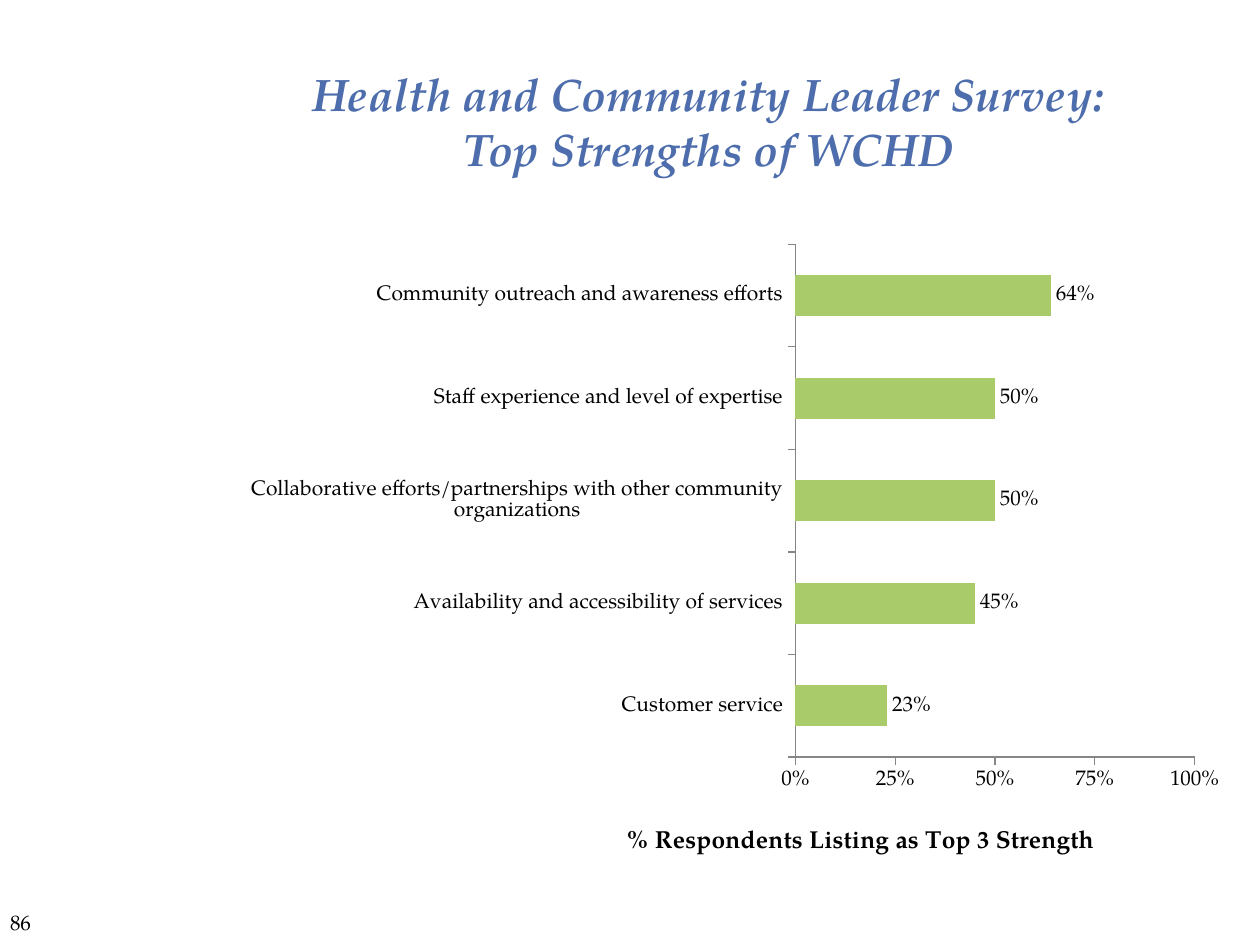
import pptx
import pptx.chart.data
import pptx.dml.color
import pptx.enum.chart
import pptx.enum.text
import pptx.oxml
import pptx.oxml.ns
import pptx.util

PX = 914400 / 126
FONT = "TeX Gyre Pagella"
HEX = {"title": "4D6DAC", "text": "000000", "bar": "AACB69", "axis": "868686"}
RATES = {
    "Customer service": 0.23,
    "Availability and accessibility of services": 0.45,
    "Collaborative efforts/partnerships with other community organizations": 0.5,
    "Staff experience and level of expertise": 0.5,
    "Community outreach and awareness efforts": 0.64,
}


def emu(px):
    return pptx.util.Emu(round(px * PX))


def color(name):
    return pptx.dml.color.RGBColor.from_string(HEX[name])


def style(font, size=12, tint="text", bold=False, italic=False):
    font.name, font.size = FONT, pptx.util.Pt(size)
    font.bold, font.italic = bold, italic
    font.color.rgb = color(tint)


def write(frame, text, **look):
    """Fill a text frame with centred text in one format."""
    frame.text = text
    for para in frame.paragraphs:
        para.alignment = pptx.enum.text.PP_ALIGN.CENTER
        for run in para.runs:
            style(run.font, **look)


def place(node, index, inner=False, **parts):
    """Give a chart part a manual layout, in fractions of the chart."""
    tag = pptx.oxml.ns.qn("c:layout")
    for old in node.findall(tag):
        node.remove(old)
    body = '<c:layoutTarget val="inner"/>' if inner else ""
    body += '<c:xMode val="edge"/><c:yMode val="edge"/>'
    body += "".join(f'<c:{key} val="{val:.3f}"/>' for key, val in parts.items())
    space = pptx.oxml.ns.nsdecls("c")
    node.insert(index, pptx.oxml.parse_xml(
        f"<c:layout {space}><c:manualLayout>{body}</c:manualLayout></c:layout>"))


def add_title(slide, box):
    title = slide.shapes.title
    title.left, title.top, title.width, title.height = map(emu, box)
    frame = title.text_frame
    frame.word_wrap = True
    frame.vertical_anchor = pptx.enum.text.MSO_ANCHOR.MIDDLE
    write(frame, "Health and Community Leader Survey:\vTop Strengths of WCHD",
          size=26, tint="title", bold=True, italic=True)


def add_bars(slide, box):
    data = pptx.chart.data.CategoryChartData(number_format="0%")
    data.categories = list(RATES)
    data.add_series("Series 1", list(RATES.values()))
    kind = pptx.enum.chart.XL_CHART_TYPE.BAR_CLUSTERED
    chart = slide.shapes.add_chart(kind, *map(emu, box), data).chart
    chart.has_legend = chart.has_title = False
    style(chart.font)

    plot = chart.plots[0]
    plot.gap_width, plot.vary_by_categories = 150, False
    fill = plot.series[0].format.fill
    fill.solid()
    fill.fore_color.rgb = color("bar")
    plot.has_data_labels = True
    labels = plot.data_labels
    labels.show_value = True
    labels.number_format, labels.number_format_is_linked = "0%", False
    labels.position = pptx.enum.chart.XL_LABEL_POSITION.OUTSIDE_END
    style(labels.font)

    scale = chart.value_axis
    for axis in (chart.category_axis, scale):
        axis.has_major_gridlines = False
        axis.major_tick_mark = pptx.enum.chart.XL_TICK_MARK.OUTSIDE
        axis.format.line.color.rgb = color("axis")
        axis.format.line.width = pptx.util.Pt(0.75)
        style(axis.tick_labels.font)
    scale.minimum_scale, scale.maximum_scale, scale.major_unit = 0, 1, 0.25
    ticks = scale.tick_labels
    ticks.number_format, ticks.number_format_is_linked = "0%", False
    title = scale.axis_title
    write(title.text_frame, "% Respondents Listing as Top 3 Strength",
          size=14, bold=True)

    wide, high = box[2:]
    area = chart.element.chart.plotArea
    place(area, 0, inner=True, x=564 / wide, y=13 / high,
          w=399 / wide, h=513 / high)
    place(title.element, 1, x=391 / wide, y=592 / high)


def add_number(slide, box):
    frame = slide.shapes.add_textbox(*map(emu, box)).text_frame
    frame.word_wrap = True
    write(frame, "86")


def main():
    deck = pptx.Presentation()
    deck.slide_width, deck.slide_height = emu(1260), emu(945)
    slide = deck.slides.add_slide(deck.slide_layouts[5])
    add_number(slide, (-32, 903, 105, 63))
    add_title(slide, (158, 42, 1102, 158))
    add_bars(slide, (231, 231, 1008, 634))
    deck.save("out.pptx")


if __name__ == "__main__":
    main()
